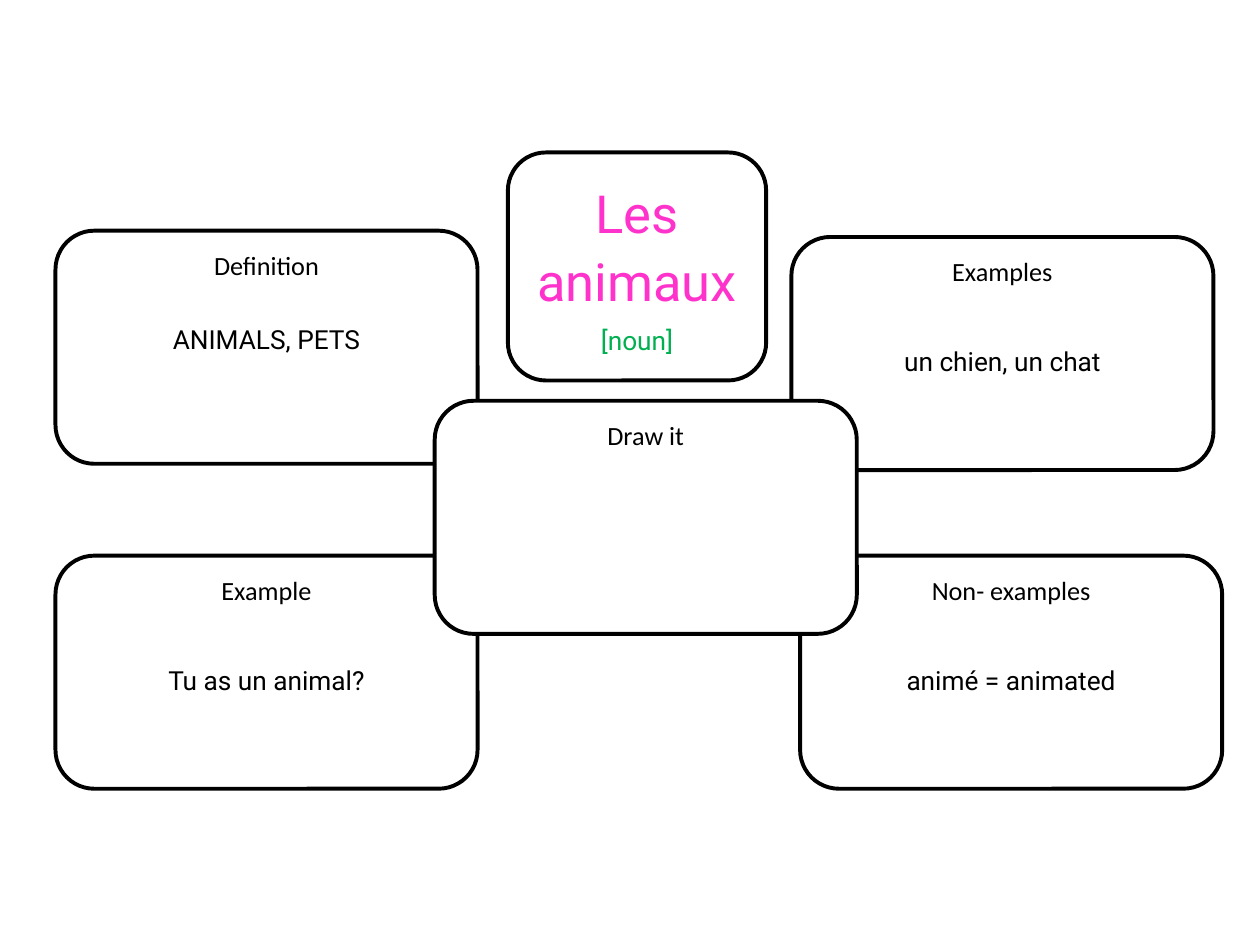
from pptx import Presentation
from pptx.dml.color import RGBColor
from pptx.enum import shapes, text
from pptx.util import Pt

COLORS = {"paper": "FFFFFF", "ink": "000000", "word": "FF33CC", "class": "00B050"}
CARD_W, CARD_H = 241.2, 133.2
LEFT_X, LOWER_Y = 31.7, 317.5
FRAME_FORMAT = {
    "word_wrap": True,
    "margin_left": Pt(5),
    "margin_right": Pt(5),
    "margin_top": Pt(2.9),
    "margin_bottom": Pt(2.9),
}

# left, top, heading, answer, gap between heading and answer
CARDS = [
    (457.2, LOWER_Y, "Non- examples", "animé = animated", 32),
    (LEFT_X, 131.8, "Definition", "ANIMALS, PETS", 23),
    (LEFT_X, LOWER_Y, "Example", "Tu as un animal?", 32),
    (452.2, 135.4, "Examples", "un chien, un chat", 32),
    (248.4, 229, "Draw it", None, 6),
]


def color(name):
    return RGBColor.from_string(COLORS[name])


def add_box(s, left, top, width, height, anchor):
    """Add a rounded, outlined box and return its text frame."""
    sp = s.shapes.add_shape(
        shapes.MSO_SHAPE.ROUNDED_RECTANGLE, Pt(left), Pt(top), Pt(width), Pt(height)
    )
    sp.shadow.inherit = False
    sp.fill.solid()
    sp.fill.fore_color.rgb = color("paper")
    sp.line.color.rgb = color("ink")
    sp.line.width = Pt(2.25)
    tf = sp.text_frame
    tf.vertical_anchor = anchor
    for name, value in FRAME_FORMAT.items():
        setattr(tf, name, value)
    return tf


def write(p, words, font, size=15, ink="ink", after=6):
    """Fill a paragraph with one centred run."""
    paragraph_format = {
        "alignment": text.PP_ALIGN.CENTER,
        "line_spacing": 1.07,
        "space_after": Pt(after),
    }
    for name, value in paragraph_format.items():
        setattr(p, name, value)
    r = p.add_run()
    r.text = words
    r.font.name = font
    r.font.size = Pt(size)
    r.font.color.rgb = color(ink)


def add_card(s, left, top, heading, answer, gap):
    tf = add_box(s, left, top, CARD_W, CARD_H, text.MSO_ANCHOR.TOP)
    write(tf.paragraphs[0], heading, "Calibri", after=gap)
    if answer:
        write(tf.add_paragraph(), answer, "Roboto")


def add_word_box(s, word, word_class):
    tf = add_box(s, 290.2, 87.1, 147.6, 130.3, text.MSO_ANCHOR.MIDDLE)
    write(tf.paragraphs[0], word, "Roboto", 30, "word")
    write(tf.add_paragraph(), word_class, "Roboto", ink="class")


def main():
    prs = Presentation()
    prs.slide_width, prs.slide_height = Pt(720), Pt(540)
    s = prs.slides.add_slide(prs.slide_layouts[6])
    for card in CARDS:
        add_card(s, *card)
    add_word_box(s, "Les animaux", "[noun]")
    prs.save("out.pptx")


if __name__ == "__main__":
    main()
